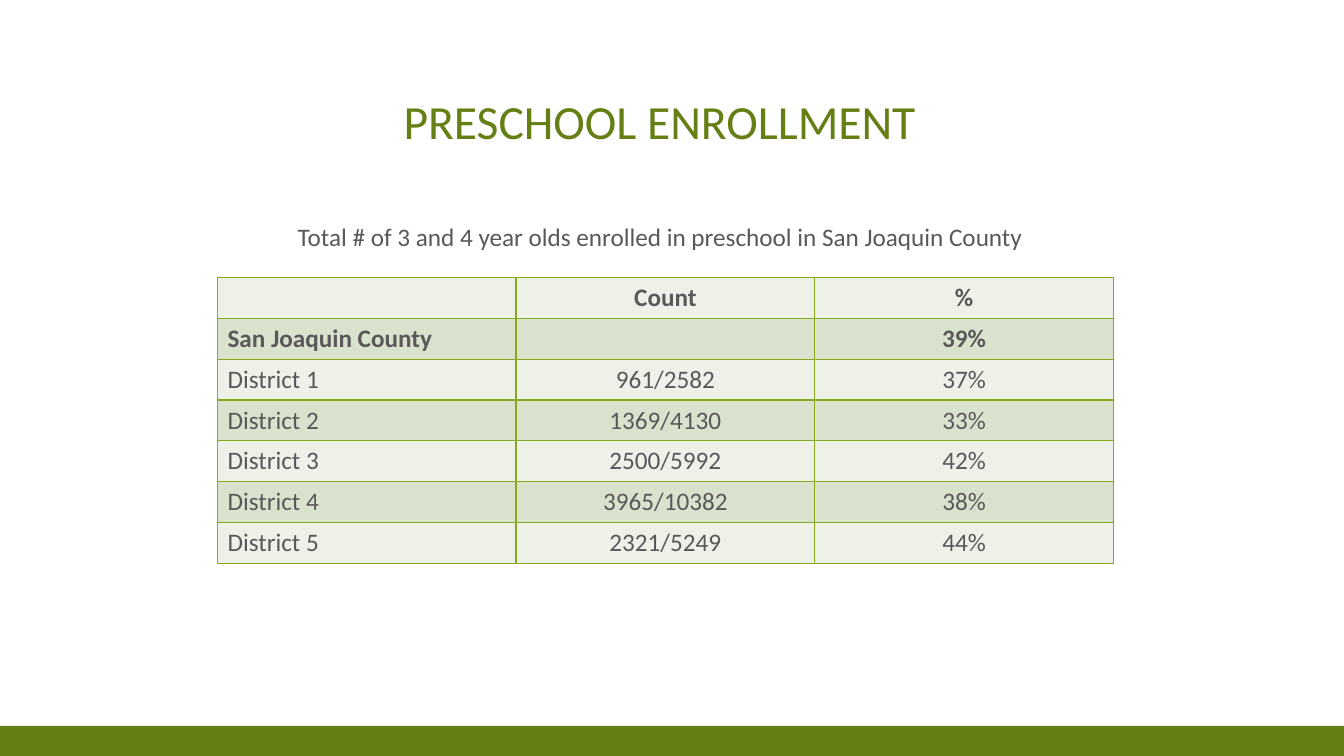
from lxml.etree import SubElement
from pptx import Presentation
from pptx.dml.color import RGBColor
from pptx.enum.shapes import MSO_SHAPE
from pptx.enum.text import MSO_ANCHOR, PP_ALIGN
from pptx.oxml.ns import qn
from pptx.util import Cm, Pt

OLIVE, LIME, GREY = "657F14", "87A91B", "595959"
BANDS = ["EDF1E8", "D9E2CD"]

ROWS = [
    ("", "Count", "%"),
    ("San Joaquin County", "", "39%"),
    ("District 1", "961/2582", "37%"),
    ("District 2", "1369/4130", "33%"),
    ("District 3", "2500/5992", "42%"),
    ("District 4", "3965/10382", "38%"),
    ("District 5", "2321/5249", "44%"),
]


def rgb(value):
    return RGBColor.from_string(value)


def write(tf, text, size=18, color=GREY, bold=False, align=PP_ALIGN.CENTER, spacing=None):
    p = tf.paragraphs[0]
    p.alignment = align
    p.line_spacing = spacing
    r = p.add_run()
    r.text = text
    r.font.name = "Calibri"
    r.font.size = Pt(size)
    r.font.bold = bold
    r.font.color.rgb = rgb(color)


def place(sp, left, top, width, height):
    sp.left, sp.top, sp.width, sp.height = Cm(left), Cm(top), Cm(width), Cm(height)


def set_borders(cell, color, width):
    tc_pr = cell._tc.get_or_add_tcPr()
    for side in ("a:lnL", "a:lnR", "a:lnT", "a:lnB"):
        ln = SubElement(tc_pr, qn(side), w=str(Pt(width)))
        SubElement(SubElement(ln, qn("a:solidFill")), qn("a:srgbClr"), val=color)


def add_footer_band(s, left, top, width, height):
    sp = s.shapes.add_shape(MSO_SHAPE.RECTANGLE, Cm(left), Cm(top), Cm(width), Cm(height))
    sp.shadow.inherit = False
    sp.fill.solid()
    sp.fill.fore_color.rgb = rgb(OLIVE)
    sp.line.fill.background()


def add_title(s, left, top, width, height):
    sp = s.shapes.title
    place(sp, left, top, width, height)
    sp.text_frame.vertical_anchor = MSO_ANCHOR.BOTTOM
    write(sp.text_frame, "PRESCHOOL ENROLLMENT ", size=34, color=OLIVE, spacing=0.9)


def add_caption(s, left, top, width, height):
    tf = s.shapes.add_textbox(Cm(left), Cm(top), Cm(width), Cm(height)).text_frame
    tf.word_wrap = True
    write(tf, "Total # of 3 and 4 year olds enrolled in preschool in San Joaquin County ")


def add_enrollment_table(s, left, top, width, height):
    table = s.shapes.add_table(len(ROWS), len(ROWS[0]), Cm(left), Cm(top),
                               Cm(width), Cm(height)).table
    for i, row in enumerate(ROWS):
        for j, text in enumerate(row):
            cell = table.cell(i, j)
            # Borders come before the fill in the cell properties
            set_borders(cell, LIME, 1)
            cell.fill.solid()
            cell.fill.fore_color.rgb = rgb(BANDS[i % 2])
            if text:
                # Header and county total are bold
                write(cell.text_frame, text, bold=i < 2,
                      align=PP_ALIGN.CENTER if j else PP_ALIGN.LEFT)


def main():
    prs = Presentation()
    prs.slide_width, prs.slide_height = Cm(33.87), Cm(19.05)
    s = prs.slides.add_slide(prs.slide_layouts[5])
    add_footer_band(s, 0, 18.29, 33.87, 0.76)
    add_title(s, 4.06, 0.71, 25.4, 3.18)
    add_caption(s, 2.46, 5.46, 28.5, 1.03)
    add_enrollment_table(s, 5.48, 6.99, 22.58, 7.21)
    prs.save("out.pptx")


if __name__ == "__main__":
    main()
